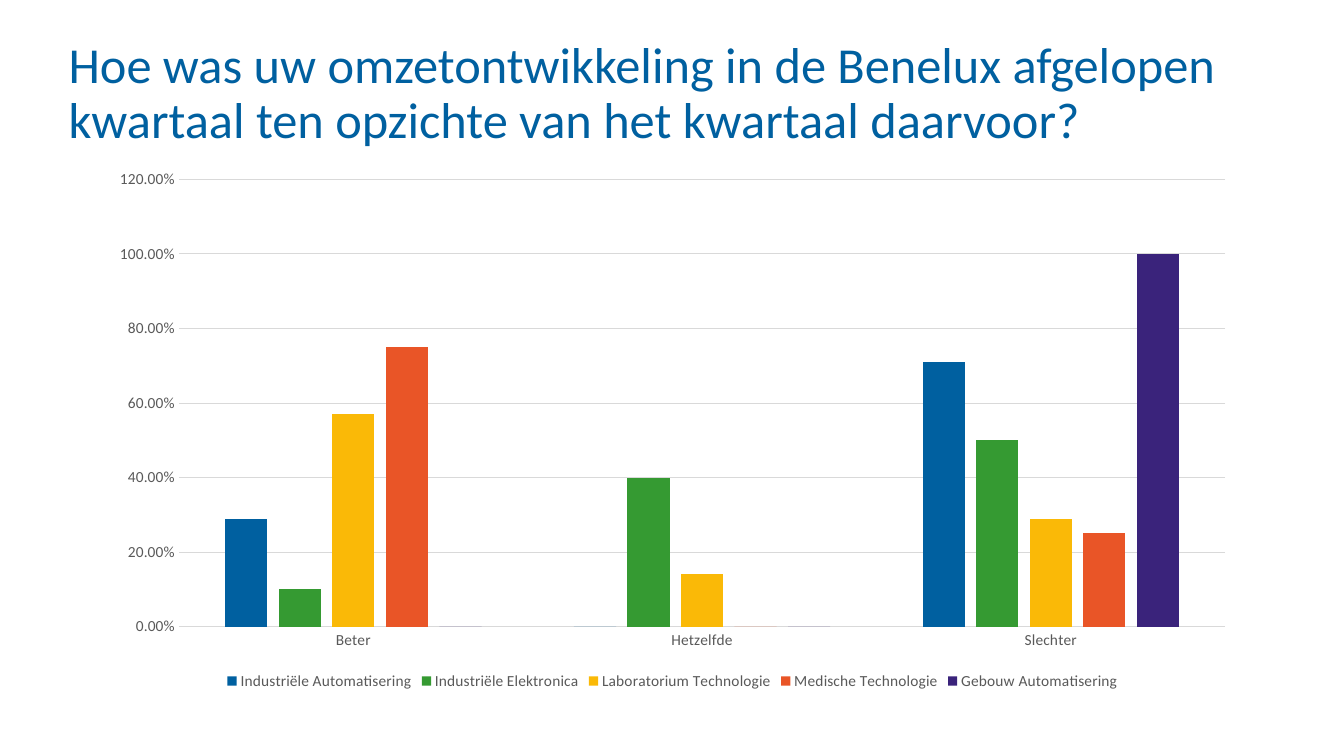
import pptx
import pptx.chart.data
import pptx.dml.color
import pptx.enum.chart
import pptx.enum.text
import pptx.util
from pptx.util import Inches

FONT = "Calibri"
COLORS = {
    "title": "0060A0",
    "label": "595959",
    "grid": "D9D9D9",
    "Industriële Automatisering": "0060A0",
    "Industriële Elektronica": "359A32",
    "Laboratorium Technologie": "FAB907",
    "Medische Technologie": "E95527",
    "Gebouw Automatisering": "3A237B",
}
ANSWERS = ["Beter", "Hetzelfde", "Slechter"]
SHARES = {
    "Industriële Automatisering": [0.29, 0, 0.71],
    "Industriële Elektronica": [0.1, 0.4, 0.5],
    "Laboratorium Technologie": [0.57, 0.14, 0.29],
    "Medische Technologie": [0.75, 0, 0.25],
    "Gebouw Automatisering": [0, 0, 1],
}


def rgb(name):
    return pptx.dml.color.RGBColor.from_string(COLORS[name])


def set_font(font, size, color):
    font.name = FONT
    font.size = pptx.util.Pt(size)
    font.bold = False
    font.color.rgb = rgb(color)


def set_line(line):
    line.color.rgb = rgb("grid")
    line.width = pptx.util.Pt(0.75)


def add_title(s, text):
    sp = s.shapes.add_textbox(Inches(0.68), Inches(0.4), Inches(11.92), Inches(0.76))
    tf = sp.text_frame
    tf.word_wrap = True
    tf.vertical_anchor = pptx.enum.text.MSO_ANCHOR.TOP
    tf.margin_left = tf.margin_right = tf.margin_top = tf.margin_bottom = 0
    p = tf.paragraphs[0]
    p.text = text
    p.line_spacing = 0.9
    set_font(p.font, 36, "title")


def style_axis(axis):
    axis.major_tick_mark = pptx.enum.chart.XL_TICK_MARK.NONE
    axis.minor_tick_mark = pptx.enum.chart.XL_TICK_MARK.NONE
    set_font(axis.tick_labels.font, 11, "label")


def add_column_chart(s):
    data = pptx.chart.data.CategoryChartData(number_format="0.00%")
    data.categories = ANSWERS
    for name, values in SHARES.items():
        data.add_series(name, values)
    chart = s.shapes.add_chart(
        pptx.enum.chart.XL_CHART_TYPE.COLUMN_CLUSTERED,
        Inches(0.96), Inches(1.58), Inches(11.42), Inches(5.31), data,
    ).chart
    chart.has_title = False
    set_font(chart.font, 11, "label")

    plot = chart.plots[0]
    plot.gap_width = 219
    plot.overlap = -27
    plot.vary_by_categories = False
    for series in plot.series:
        series.invert_if_negative = False
        series.format.fill.solid()
        series.format.fill.fore_color.rgb = rgb(series.name)

    style_axis(chart.category_axis)
    set_line(chart.category_axis.format.line)

    axis = chart.value_axis
    style_axis(axis)
    axis.minimum_scale = 0
    axis.maximum_scale = 1.2
    axis.major_unit = 0.2
    axis.tick_labels.number_format = "0.00%"
    axis.tick_labels.number_format_is_linked = False
    axis.format.line.fill.background()
    set_line(axis.major_gridlines.format.line)

    chart.has_legend = True
    chart.legend.position = pptx.enum.chart.XL_LEGEND_POSITION.BOTTOM
    chart.legend.include_in_layout = False
    set_font(chart.legend.font, 11, "label")


def main():
    prs = pptx.Presentation()
    prs.slide_width = Inches(13.33)
    prs.slide_height = Inches(7.5)
    s = prs.slides.add_slide(prs.slide_layouts[6])
    add_title(
        s,
        "Hoe was uw omzetontwikkeling in de Benelux afgelopen "
        "kwartaal ten opzichte van het kwartaal daarvoor?",
    )
    add_column_chart(s)
    prs.save("out.pptx")


if __name__ == "__main__":
    main()
